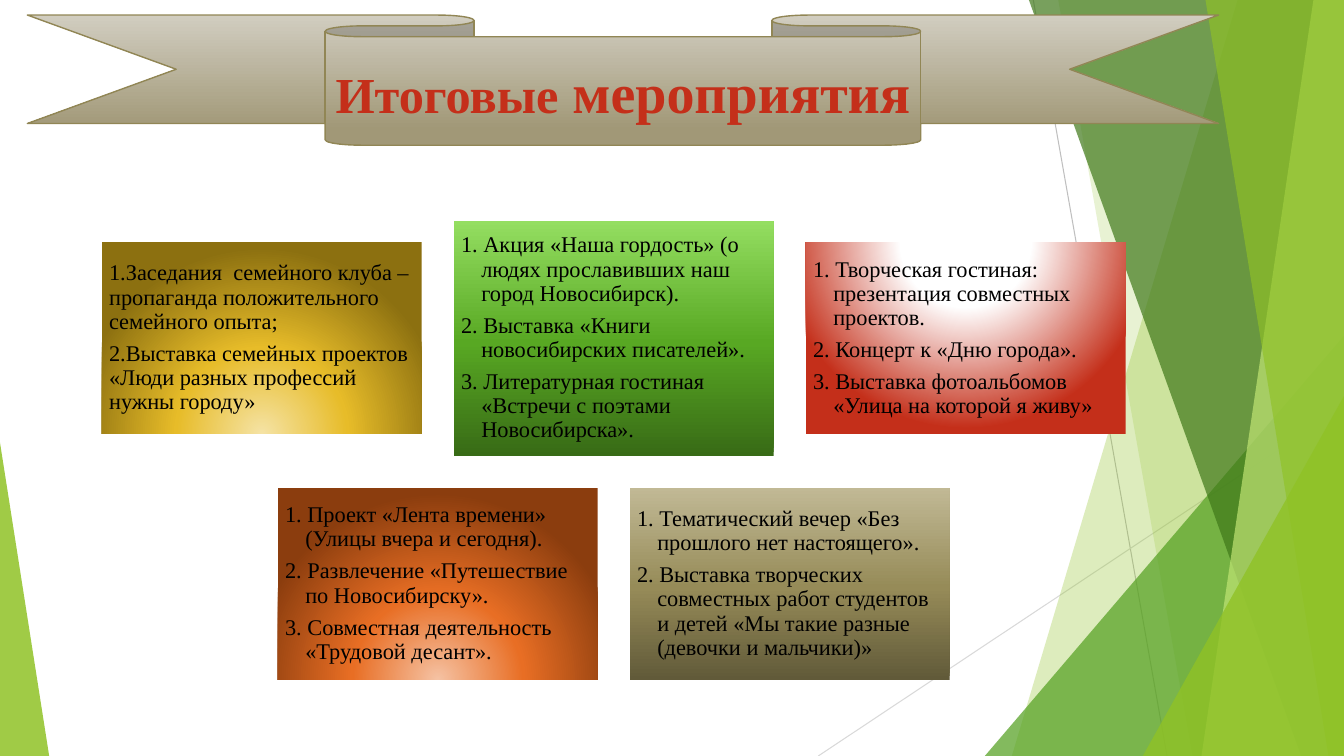
"""Build the slide of closing events with a ribbon title and five gradient cards."""
import pptx
import pptx.util
import pptx.dml.color
import pptx.enum.shapes
import pptx.enum.text
import pptx.oxml
import pptx.oxml.ns
from lxml import etree

Cm = pptx.util.Cm
Pt = pptx.util.Pt
SHAPE = pptx.enum.shapes.MSO_SHAPE
ALIGN = pptx.enum.text.PP_ALIGN
WIDTH, HEIGHT = 33.87, 19.05
FONT = "Times New Roman"
COLORS = {
    "lime": "90C226", "green": "54A021", "forest": "3F7819", "pale": "C0E474",
    "line": "BFBFBF", "light_line": "D9D9D9",
    "title": "C42F1A", "ribbon_line": "918655", "text": "000000",
}
RIBBON = [(0, "D1CDC0"), (88, "A19877")]
DOWN = '<a:lin ang="5400000" scaled="0"/>'
UP = '<a:lin ang="16200000" scaled="0"/>'
GLOW = '<a:path path="circle"><a:fillToRect l="50000" t="{}" r="50000" b="{}"/></a:path>'
GLOW_BELOW = GLOW.format(130000, -30000)
GLOW_ABOVE = GLOW.format(-80000, 180000)

CARD_LEFT, CARD_PITCH, CARD_WIDTH, CARD_HEIGHT = 2.57, 8.87, 8.06, 4.83
ROWS = (8.52, 14.71)
CARDS = [
    (0, 0, CARD_HEIGHT, [(0, "F5E3A5"), (46, "E7BC29"), (100, "8C7010")], GLOW_BELOW, 0, [
        "1.Заседания  семейного клуба – пропаганда положительного семейного опыта;",
        "2.Выставка семейных проектов «Люди разных профессий нужны городу»"]),
    (1, 0, 5.92, [(0, "386B16"), (48, "58A823"), (100, "94DE61")], UP, 0.51, [
        "1. Акция «Наша гордость» (о людях прославивших наш город Новосибирск).",
        "2. Выставка «Книги новосибирских писателей».",
        "3. Литературная гостиная «Встречи с поэтами Новосибирска»."]),
    (2, 0, CARD_HEIGHT, [(0, "FFFFFF"), (35, "FFFFFF"), (100, "C42F1A")], GLOW_ABOVE, 0.51, [
        "1. Творческая гостиная: презентация совместных проектов.",
        "2. Концерт к «Дню города».",
        "3. Выставка фотоальбомов «Улица на которой я живу»"]),
    (0.5, 1, CARD_HEIGHT, [(0, "F5C2A3"), (46, "E86E24"), (100, "8B3D0E")], GLOW_BELOW, 0.51, [
        "1. Проект «Лента времени» (Улицы вчера и сегодня).",
        "2. Развлечение «Путешествие по Новосибирску».",
        "3. Совместная деятельность «Трудовой десант»."]),
    (1.5, 1, CARD_HEIGHT, [(0, "615A39"), (48, "968B58"), (100, "C1B995")], UP, 0.51, [
        "1. Тематический вечер «Без прошлого нет настоящего».",
        "2. Выставка творческих совместных работ студентов и детей "
        "«Мы такие разные (девочки и мальчики)»"]),
]


def rgb(name):
    return pptx.dml.color.RGBColor.from_string(COLORS[name])


def tint(sp, color, alpha):
    sp.shadow.inherit = False
    sp.line.fill.background()
    sp.fill.solid()
    sp.fill.fore_color.rgb = rgb(color)
    clr = sp.fill._xPr.find(".//" + pptx.oxml.ns.qn("a:srgbClr"))
    etree.SubElement(clr, pptx.oxml.ns.qn("a:alpha"), val=str(alpha * 1000))


def gradient(sp, stops, direction):
    gs = "".join(f'<a:gs pos="{pos * 1000}"><a:srgbClr val="{c}"/></a:gs>' for pos, c in stops)
    grad = pptx.oxml.parse_xml(
        f'<a:gradFill {pptx.oxml.ns.nsdecls("a")} rotWithShape="1">'
        f"<a:gsLst>{gs}</a:gsLst>{direction}</a:gradFill>")
    sp.shadow.inherit = False
    sp.fill.solid()
    solid = sp._element.spPr.find(pptx.oxml.ns.qn("a:solidFill"))
    solid.getparent().replace(solid, grad)


def add_line(s, x1, y1, x2, y2, color):
    line = s.shapes.add_connector(
        pptx.enum.shapes.MSO_CONNECTOR.STRAIGHT, Cm(x1), Cm(y1), Cm(x2), Cm(y2))
    line.line.color.rgb = rgb(color)
    line.line.width = Pt(0.75)
    etree.SubElement(line._element.spPr, pptx.oxml.ns.qn("a:effectLst"))


def add_facet(s, top_x, bottom_x, color, alpha):
    fb = s.shapes.build_freeform(Cm(top_x), 0)
    fb.add_line_segments([(Cm(WIDTH), 0), (Cm(WIDTH), Cm(HEIGHT)), (Cm(bottom_x), Cm(HEIGHT))])
    tint(fb.convert_to_shape(), color, alpha)


def add_corner(s, left, top, width, apex, color, alpha):
    sp = s.shapes.add_shape(
        SHAPE.ISOSCELES_TRIANGLE, Cm(left), Cm(top), Cm(width), Cm(HEIGHT - top))
    sp.adjustments[0] = apex
    tint(sp, color, alpha)


def add_backdrop(s):
    add_line(s, 26.04, 0, 29.41, HEIGHT, "line")
    add_line(s, WIDTH, 10.24, 20.62, HEIGHT, "light_line")
    add_facet(s, 31.19, 25.5, "lime", 30)
    add_facet(s, 26.67, 30.05, "lime", 20)
    add_corner(s, 24.82, 8.46, 9.05, 1, "green", 72)
    add_facet(s, 25.93, 32.79, "forest", 70)
    add_facet(s, 33.1, 30.28, "pale", 70)
    add_facet(s, 30.38, 33.48, "lime", 65)
    add_corner(s, 28.8, 9.98, 5.07, 1, "lime", 80)
    add_corner(s, 0, 11.15, 1.24, 0, "lime", 85)


def setup_text(sp, margin):
    tf = sp.text_frame
    tf.word_wrap = True
    tf.vertical_anchor = pptx.enum.text.MSO_ANCHOR.MIDDLE
    tf.margin_left = tf.margin_right = tf.margin_top = tf.margin_bottom = Cm(margin)
    return tf


def add_title(s):
    sp = s.shapes.add_shape(SHAPE.DOWN_RIBBON, Cm(0.69), Cm(0.38), Cm(30.02), Cm(3.28))
    gradient(sp, RIBBON, DOWN)
    sp.line.color.rgb = rgb("ribbon_line")
    sp.line.width = Pt(1)
    p = setup_text(sp, 0).paragraphs[0]
    p.alignment = ALIGN.CENTER
    p.font.name, p.font.bold = FONT, True
    p.font.color.rgb = rgb("title")
    for text, size in (("Итоговые", 36), (" мероприятия", 40)):
        r = p.add_run()
        r.text = text
        r.font.size = Pt(size)


def add_card(s, col, row, height, stops, direction, indent, items):
    sp = s.shapes.add_shape(
        SHAPE.RECTANGLE, Cm(CARD_LEFT + col * CARD_PITCH), Cm(ROWS[row] - height / 2),
        Cm(CARD_WIDTH), Cm(height))
    gradient(sp, stops, direction)
    sp.line.fill.background()
    tf = setup_text(sp, 0.18)
    for i, item in enumerate(items):
        p = tf.add_paragraph() if i else tf.paragraphs[0]
        p.text = item
        p.alignment = ALIGN.LEFT
        p.line_spacing = 0.9
        p.space_after = Pt(5.6)
        pPr = p._p.get_or_add_pPr()
        pPr.set("marL", str(Cm(indent)))
        pPr.set("indent", str(-Cm(indent)))
        p.font.name, p.font.size = FONT, Pt(16)
        p.font.color.rgb = rgb("text")


def main():
    prs = pptx.Presentation()
    prs.slide_width, prs.slide_height = Cm(WIDTH), Cm(HEIGHT)
    s = prs.slides.add_slide(prs.slide_layouts[6])
    add_backdrop(s)
    add_title(s)
    for card in CARDS:
        add_card(s, *card)
    prs.save("out.pptx")


if __name__ == "__main__":
    main()
